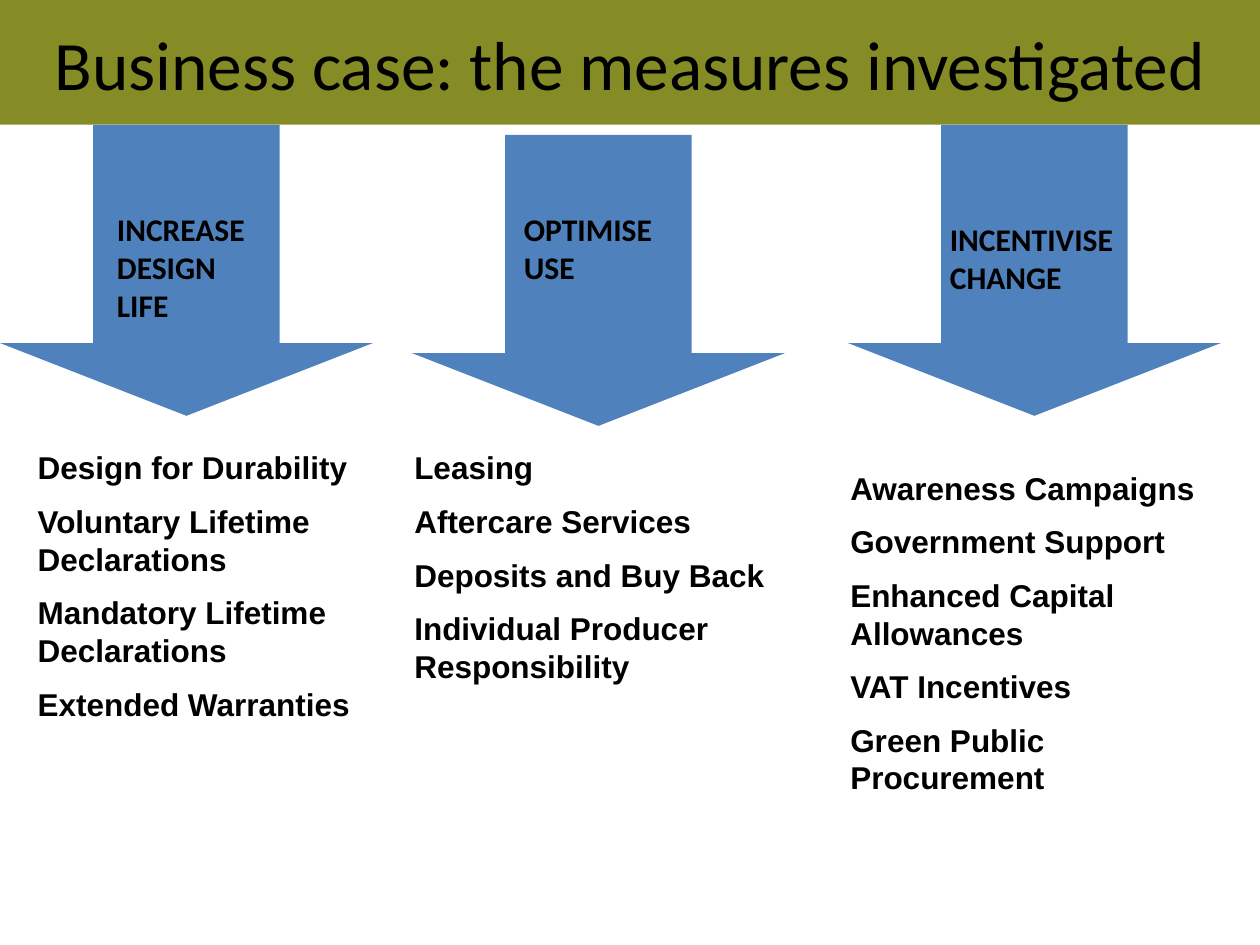
from pptx import Presentation
from pptx import util as u
from pptx.dml.color import RGBColor
from pptx.enum import shapes, text

TITLE = "Business case: the measures investigated"
# Boxes are left, top, width, height in inches.
COLUMNS = [
    {
        "arrow": (0, 0.99),
        "heading": ("INCREASE DESIGN LIFE", (0.83, 1.62, 1.34, 1.01)),
        "measures": ["Design for Durability", "Voluntary Lifetime Declarations",
                     "Mandatory Lifetime Declarations", "Extended Warranties"],
        "list": (0.2, 3.51, 2.81, 2.37),
    },
    {
        "arrow": (3.27, 1.07),
        "heading": ("OPTIMISE USE", (4.06, 1.62, 1.34, 0.71)),
        "measures": ["Leasing", "Aftercare Services", "Deposits and Buy Back",
                     "Individual Producer Responsibility"],
        "list": (3.19, 3.51, 3.6, 2.07),
    },
    {
        "arrow": (6.73, 0.99),
        "heading": ("INCENTIVISE CHANGE", (7.44, 1.7, 1.65, 0.71)),
        "measures": ["Awareness Campaigns", "Government Support",
                     "Enhanced Capital Allowances", "VAT Incentives",
                     "Green Public Procurement"],
        "list": (6.65, 3.67, 3.15, 2.83),
    },
]
COLORS = {"banner": "858C26", "arrow": "4F81BD", "text": "000000"}
SLIDE_SIZE = (10, 7.5)
BANNER_HEIGHT = 0.99
ARROW_SIZE = (2.96, 2.31)


def color(name):
    return RGBColor.from_string(COLORS[name])


def add_filled(page, kind, bounds, fill):
    shape = page.shapes.add_shape(kind, *map(u.Inches, bounds))
    shape.shadow.inherit = False
    shape.fill.solid()
    shape.fill.fore_color.rgb = color(fill)
    shape.line.fill.background()
    return shape


def write(frame, lines, font, size, bold=True, align=text.PP_ALIGN.LEFT, gap=0):
    frame.word_wrap = True
    for index, line in enumerate(lines):
        para = frame.add_paragraph() if index else frame.paragraphs[0]
        para.alignment = align
        para.space_before = u.Pt(gap)
        span = para.add_run()
        span.text = line
        span.font.name = font
        span.font.size = u.Pt(size)
        span.font.bold = bold
        span.font.color.rgb = color("text")


def add_text(page, bounds, lines, font, gap=0):
    box = page.shapes.add_textbox(*map(u.Inches, bounds))
    box.text_frame.auto_size = text.MSO_AUTO_SIZE.SHAPE_TO_FIT_TEXT
    write(box.text_frame, lines, font, 18, gap=gap)


def main():
    deck = Presentation()
    deck.slide_width, deck.slide_height = map(u.Inches, SLIDE_SIZE)
    page = deck.slides.add_slide(deck.slide_layouts[6])

    banner = add_filled(page, shapes.MSO_SHAPE.RECTANGLE,
                        (0, 0, SLIDE_SIZE[0], BANNER_HEIGHT), "banner")
    banner.text_frame.vertical_anchor = text.MSO_ANCHOR.MIDDLE
    write(banner.text_frame, [TITLE], "Calibri", 39.6, bold=False,
          align=text.PP_ALIGN.CENTER)

    for column in COLUMNS:
        arrow = add_filled(page, shapes.MSO_SHAPE.DOWN_ARROW,
                           column["arrow"] + ARROW_SIZE, "arrow")
        arrow.adjustments[0] = 0.5
        arrow.adjustments[1] = 0.25
        add_text(page, column["list"], column["measures"], "Arial", gap=9)
        heading, bounds = column["heading"]
        add_text(page, bounds, [heading], "Calibri")

    deck.save("out.pptx")


if __name__ == "__main__":
    main()
